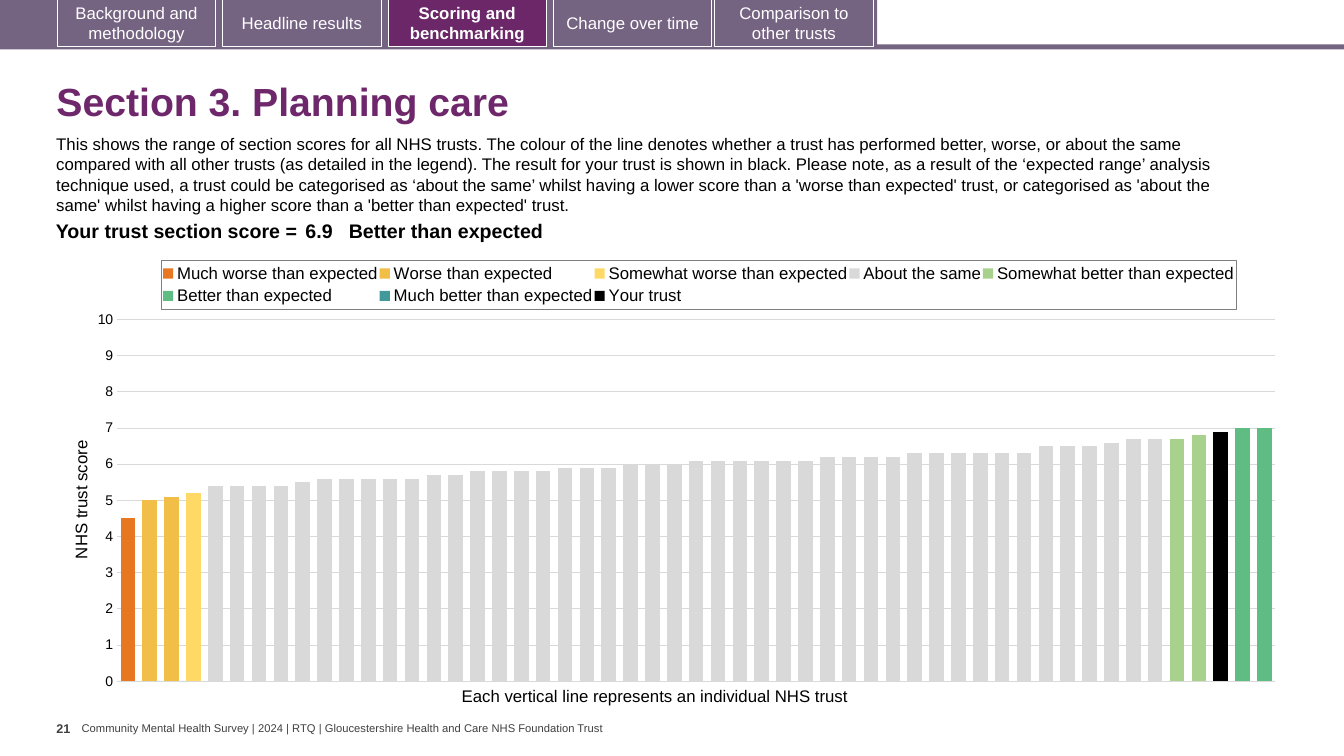
import copy
import pptx
import pptx.chart.data
import pptx.dml.color
import pptx.enum.chart
import pptx.enum.shapes
import pptx.enum.text
import pptx.oxml.ns
import pptx.util

Inches = pptx.util.Inches
Pt = pptx.util.Pt
RGBColor = pptx.dml.color.RGBColor
ALIGN = pptx.enum.text.PP_ALIGN
MIDDLE = pptx.enum.text.MSO_ANCHOR.MIDDLE
qn = pptx.oxml.ns.qn

BLACK = RGBColor(0x00, 0x00, 0x00)
WHITE = RGBColor(0xFF, 0xFF, 0xFF)
SLATE = RGBColor(0x40, 0x40, 0x40)
MAUVE = RGBColor(0x75, 0x63, 0x82)
PLUM = RGBColor(0x6B, 0x27, 0x68)
TITLE = RGBColor(0x6D, 0x27, 0x6A)
GRID = RGBColor(0xD9, 0xD9, 0xD9)

TABS = [("Background and methodology", 0.57), ("Headline results", 2.21),
        ("Scoring and benchmarking", 3.85), ("Change over time", 5.49),
        ("Comparison to other trusts", 7.09)]
ACTIVE = "Scoring and benchmarking"
INTRO = (
    "This shows the range of section scores for all NHS trusts. The colour of the line denotes whether a trust "
    "has performed better, worse, or about the same compared with all other trusts (as detailed in the legend). "
    "The result for your trust is shown in black. Please note, as a result of the ‘expected range’ analysis "
    "technique used, a trust could be categorised as ‘about the same’ whilst having a lower score than a 'worse "
    "than expected' trust, or categorised as 'about the same' whilst having a higher score than a 'better than "
    "expected' trust.")
FOOTER = "Community Mental Health Survey | 2024 | RTQ | Gloucestershire Health and Care NHS Foundation Trust"
SCORE = [("Your trust section score =", 2.63, ALIGN.RIGHT, 0.04),
         ("6.9", 0.47, ALIGN.LEFT, 0.04),
         ("Better than expected", 8.59, ALIGN.LEFT, 0)]
COUNT = 53
SAME = ([5.4] * 4 + [5.5] + [5.6] * 5 + [5.7] * 2 + [5.8] * 4 + [5.9] * 3 + [6.0] * 3
        + [6.1] * 6 + [6.2] * 4 + [6.3] * 6 + [6.5] * 3 + [6.6] + [6.7] * 2)
BANDS = [
    ("Much worse than expected", RGBColor(0xE8, 0x77, 0x22), 0, [4.5]),
    ("Worse than expected", RGBColor(0xF1, 0xBE, 0x48), 1, [5.0, 5.1]),
    ("Somewhat worse than expected", RGBColor(0xFF, 0xD9, 0x66), 3, [5.2]),
    ("About the same", GRID, 4, SAME),
    ("Somewhat better than expected", RGBColor(0xA9, 0xD1, 0x8E), 48, [6.7, 6.8]),
    ("Better than expected", RGBColor(0x5F, 0xBD, 0x83), 50, [6.9, 7.0, 7.0]),
    ("Much better than expected", RGBColor(0x41, 0x99, 0x99), 53, []),
    ("Your trust", BLACK, 50, [6.9]),
]


def style(font, size, color, bold=False):
    """Set the face, size, colour and weight of a font."""
    font.name, font.size, font.bold = "Arial", Pt(size), bold
    font.color.rgb = color


def write(frame, text, size, color, bold=False, align=ALIGN.LEFT):
    """Fill the first paragraph of a frame with one styled run."""
    frame.paragraphs[0].alignment = align
    run = frame.paragraphs[0].add_run()
    run.text = text
    style(run.font, size, color, bold)


def add_text(slide, box, text, size, color, bold=False, pad=0.1):
    """Add a wrapped text box with the given side inset."""
    frame = slide.shapes.add_textbox(*map(Inches, box)).text_frame
    frame.word_wrap = True
    frame.margin_left = frame.margin_right = Inches(pad)
    write(frame, text, size, color, bold)
    return frame


def add_bar(slide, box, fill):
    """Add a plain filled rectangle."""
    bar = slide.shapes.add_shape(pptx.enum.shapes.MSO_SHAPE.RECTANGLE, *map(Inches, box))
    bar.shadow.inherit = False
    bar.fill.solid()
    bar.fill.fore_color.rgb = fill
    bar.line.fill.background()
    return bar


def add_tabs(slide, left, top, width, height):
    """Draw the strip of section tabs."""
    add_bar(slide, (left, top + height - 0.05, width, 0.05), MAUVE)
    add_bar(slide, (left, top, 8.7, height - 0.02), MAUVE)
    for name, start in TABS:
        live = name == ACTIVE
        tab = add_bar(slide, (left + start, top - 0.01, 1.57, 0.47), PLUM if live else MAUVE)
        tab.line.color.rgb = WHITE
        tab.line.width = Pt(0.75)
        tab.text_frame.vertical_anchor = MIDDLE
        write(tab.text_frame, name, 12, WHITE, live, ALIGN.CENTER)


def add_head(slide, left, top, width, height):
    """Place the title and the text below it."""
    title = slide.shapes.title
    title.left, title.top, title.width, title.height = map(Inches, (left, top, width, 0.72))
    title.text_frame.vertical_anchor = MIDDLE
    write(title.text_frame, "Section 3. Planning care", 28, TITLE, True)
    title.text_frame.paragraphs[0].line_spacing = 0.9
    add_text(slide, (left, top + 0.61, 12.13, height - 0.61), INTRO, 12, BLACK)


def add_score(slide, *box):
    """Add the one-row table with the score of the trust."""
    table = slide.shapes.add_table(1, len(SCORE), *map(Inches, box)).table
    table.first_row = table.horz_banding = False
    for spot, (text, width, align, pad) in enumerate(SCORE):
        table.columns[spot].width = Inches(width)
        cell = table.cell(0, spot)
        cell.fill.background()
        cell.margin_top = cell.margin_bottom = Inches(0.04)
        cell.margin_left = cell.margin_right = Inches(pad)
        write(cell.text_frame, text, 14, BLACK, True, align)


def make_node(tag, body):
    """Parse one chart element from its inner XML."""
    return pptx.oxml.parse_xml(f"<c:{tag} {pptx.oxml.ns.nsdecls('c', 'a')}>{body}</c:{tag}>")


def set_place(node, index, size, spots, inner=False):
    """Fix a chart part at an inch box within the chart."""
    for old in node.findall(qn("c:layout")):
        node.remove(old)
    body = '<c:layoutTarget val="inner"/>' if inner else ""
    body += '<c:xMode val="edge"/><c:yMode val="edge"/>'
    body += "".join(f'<c:{key} val="{spot / full}"/>' for key, spot, full in zip("xywh", spots, size * 2))
    node.insert(index, make_node("layout", f"<c:manualLayout>{body}</c:manualLayout>"))


def add_key(chart, size):
    """Add the framed legend above the bars."""
    chart.has_legend = True
    key = chart.legend
    key.position = pptx.enum.chart.XL_LEGEND_POSITION.TOP
    key.include_in_layout = False
    style(key.font, 12, BLACK)
    set_place(key._element, 1, size, (0.93, 0.11, 10.66, 0.49))
    fill = '<a:solidFill><a:srgbClr val="7F7F7F"/></a:solidFill>'
    key._element.find(qn("c:overlay")).addnext(make_node("spPr", f'<a:ln w="9525">{fill}</a:ln>'))


def add_axes(chart, size):
    """Format the score axis and hide the other."""
    chart.category_axis.visible = False
    axis = chart.value_axis
    axis.minimum_scale, axis.maximum_scale, axis.major_unit = 0, 10, 1
    axis.major_tick_mark = pptx.enum.chart.XL_TICK_MARK.NONE
    axis.format.line.fill.background()
    axis.major_gridlines.format.line.color.rgb = GRID
    axis.major_gridlines.format.line.width = Pt(0.75)
    axis.tick_labels.number_format, axis.tick_labels.number_format_is_linked = "0", False
    style(axis.tick_labels.font, 10, BLACK)
    write(axis.axis_title.text_frame, "NHS trust score", 12, BLACK, align=ALIGN.CENTER)
    set_place(axis.axis_title._element, 1, size, (0, 1.87))


def split_plot(area):
    """Move the last series to a second plot with its own right axis."""
    plot, cat, val = (area.find(qn(f"c:{tag}")) for tag in ("barChart", "catAx", "valAx"))
    twin, base, side = map(copy.deepcopy, (plot, cat, val))
    plot.remove(plot.findall(qn("c:ser"))[-1])
    for row in twin.findall(qn("c:ser"))[:-1]:
        twin.remove(row)
    for node, code in zip(twin.findall(qn("c:axId")), "12"):
        node.set("val", code)
    for axis, own, other in ((base, "1", "2"), (side, "2", "1")):
        axis.find(qn("c:axId")).set("val", own)
        axis.find(qn("c:crossAx")).set("val", other)
    for tag in ("majorGridlines", "title"):
        side.remove(side.find(qn(f"c:{tag}")))
    for tag, value in (("axPos", "r"), ("majorTickMark", "out"), ("tickLblPos", "none"), ("crosses", "max")):
        side.find(qn(f"c:{tag}")).set("val", value)
    plot.addnext(twin)
    val.addnext(side)
    side.addnext(base)


def add_plot(slide, left, top, width, height):
    """Add the column chart and its caption."""
    data = pptx.chart.data.CategoryChartData(number_format="0.0")
    data.categories = [str(spot + 1) for spot in range(COUNT)]
    for name, _, start, vals in BANDS:
        data.add_series(name, [None] * start + vals + [None] * (COUNT - start - len(vals)))
    kind = pptx.enum.chart.XL_CHART_TYPE.COLUMN_CLUSTERED
    chart = slide.shapes.add_chart(kind, *map(Inches, (left, top, width, height)), data).chart
    style(chart.font, 10, BLACK)
    chart.has_title = False
    plot = chart.plots[0]
    plot.gap_width, plot.overlap, plot.vary_by_categories = 50, 100, False
    for series, (_, color, _, _) in zip(plot.series, BANDS):
        series.invert_if_negative = False
        series.format.fill.solid()
        series.format.fill.fore_color.rgb = color
    add_key(chart, (width, height))
    add_axes(chart, (width, height))
    area = chart._chartSpace.chart.plotArea
    set_place(area, 0, (width, height), (0.49, 0.7, 11.49, 3.59), True)
    split_plot(area)
    note = "Each vertical line represents an individual NHS trust"
    add_text(slide, (left + 3.81, top + height - 0.16, 4.11, 0.3), note, 12, BLACK)


def add_foot(slide, left, top, width, height):
    """Add the page number and the footer line."""
    add_text(slide, (left, top, 0.25, height), "21", 9, SLATE, True, 0)
    frame = add_text(slide, (left + 0.25, top + 0.06, width - 0.25, 0.13), FOOTER, 8, SLATE, pad=0)
    frame.margin_top = frame.margin_bottom = 0
    frame.vertical_anchor = MIDDLE


deck = pptx.Presentation()
deck.slide_width, deck.slide_height = Inches(13.33), Inches(7.5)
page = deck.slides.add_slide(deck.slide_layouts[5])
add_tabs(page, 0, 0, 13.33, 0.49)
add_head(page, 0.46, 0.67, 12.49, 1.53)
add_plot(page, 0.67, 2.47, 12.15, 4.44)
add_score(page, 0.36, 2.15, 11.69, 0.31)
add_foot(page, 0.56, 7.1, 5.49, 0.4)
deck.save("out.pptx")
